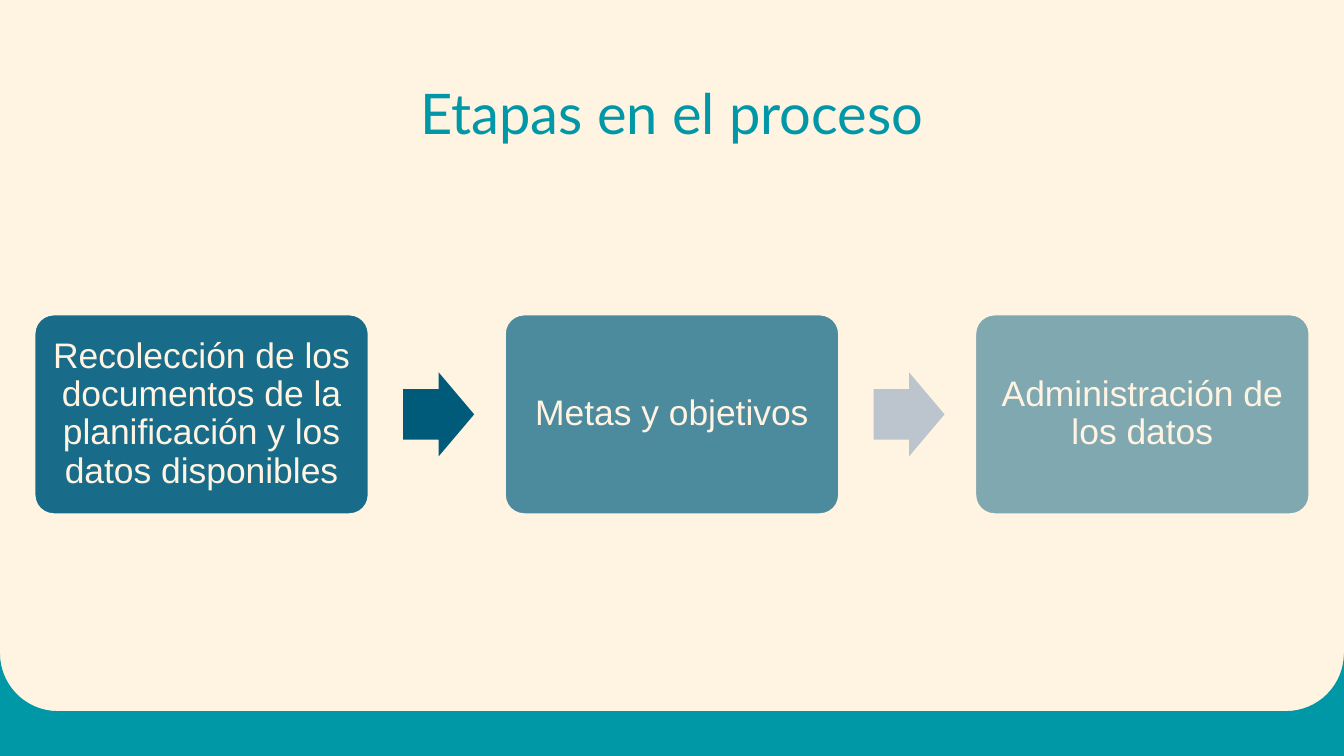
from dataclasses import dataclass
from math import cos, pi, sin

from lxml import etree
from pptx import Presentation
from pptx.dml.color import RGBColor
from pptx.enum.shapes import MSO_SHAPE
from pptx.enum.text import MSO_ANCHOR, PP_ALIGN
from pptx.oxml.ns import qn
from pptx.util import Pt

ROUNDED = MSO_SHAPE.ROUNDED_RECTANGLE
ARROW = MSO_SHAPE.RIGHT_ARROW
CENTER = PP_ALIGN.CENTER
MIDDLE = MSO_ANCHOR.MIDDLE
TOP = MSO_ANCHOR.TOP


@dataclass(frozen=True)
class Theme:
    cream: RGBColor = RGBColor(0xFF, 0xF3, 0xE2)
    teal: RGBColor = RGBColor(0x00, 0x97, 0xA7)
    stage: RGBColor = RGBColor(0x00, 0x5E, 0x80)
    arrows: tuple = (RGBColor(0x00, 0x5A, 0x7A), RGBColor(0xBC, 0xC5, 0xCD))
    title_font: str = "Lato"
    body_font: str = "Arial"
    title_size: int = 30
    body_size: int = 19


THEME = Theme()
STAGES = (
    ("Recolección de los documentos de la planificación y los datos disponibles", 90),
    ("Metas y objetivos", 70),
    ("Administración de los datos", 50),
)


@dataclass(frozen=True)
class Box:
    left: float
    top: float
    width: float
    height: float

    def lengths(self):
        return Pt(self.left), Pt(self.top), Pt(self.width), Pt(self.height)


def paint(shape, color, opacity=100):
    shape.shadow.inherit = False
    shape.fill.solid()
    shape.fill.fore_color.rgb = color
    shape.line.fill.background()
    if opacity < 100:
        color_element = shape.fill._xPr.find(qn("a:solidFill"))[0]
        etree.SubElement(color_element, qn("a:alpha"), val=str(opacity * 1000))


def write(shape, text, font, size, color, inset, anchor, spacing=1.0):
    frame = shape.text_frame
    frame.word_wrap = True
    frame.vertical_anchor = anchor
    frame.margin_left = frame.margin_right = Pt(inset)
    frame.margin_top = frame.margin_bottom = Pt(inset)
    paragraph = frame.paragraphs[0]
    paragraph.alignment = CENTER
    paragraph.line_spacing = spacing
    run = paragraph.add_run()
    run.text = text
    run.font.name = font
    run.font.size = Pt(size)
    run.font.color.rgb = color


def add_footer(slide, box, radius=31, steps=16):
    right, bottom = box.left + box.width, box.top + box.height
    angles = [step * pi / 2 / steps for step in range(steps + 1)]
    left_curve = [
        (box.left + radius * (1 - cos(angle)), box.top + radius * sin(angle))
        for angle in angles
    ]
    right_curve = [(box.left + right - x, y) for x, y in reversed(left_curve)]
    points = left_curve + right_curve + [(right, bottom), (box.left, bottom)]
    builder = slide.shapes.build_freeform(
        Pt(points[0][0]), Pt(points[0][1]), scale=1.0
    )
    builder.add_line_segments([(Pt(x), Pt(y)) for x, y in points[1:]], close=True)
    paint(builder.convert_to_shape(), THEME.teal)


def add_title(slide, box, text):
    title = slide.shapes.add_textbox(*box.lengths())
    write(title, text, THEME.title_font, THEME.title_size, THEME.teal, 7.2, TOP)


def add_stage(slide, box, text, opacity):
    stage = slide.shapes.add_shape(ROUNDED, *box.lengths())
    stage.adjustments[0] = 0.1
    paint(stage, THEME.stage, opacity)
    stage.line.color.rgb = THEME.cream
    stage.line.width = Pt(2)
    write(stage, text, THEME.body_font, THEME.body_size, THEME.cream, 5, MIDDLE, 0.9)


def add_arrow(slide, box, color):
    arrow = slide.shapes.add_shape(ARROW, *box.lengths())
    arrow.adjustments[0] = 0.6
    arrow.adjustments[1] = 0.5
    paint(arrow, color)


def add_process(slide, box, stage_width=180, arrow_width=38, arrow_height=45):
    pitch = (box.width - stage_width) / (len(STAGES) - 1)
    arrow_top = box.top + (box.height - arrow_height) / 2
    for index, (text, opacity) in enumerate(STAGES):
        left = box.left + index * pitch
        add_stage(slide, Box(left, box.top, stage_width, box.height), text, opacity)
        if index < len(THEME.arrows):
            arrow_left = left + stage_width + 18
            arrow_box = Box(arrow_left, arrow_top, arrow_width, arrow_height)
            add_arrow(slide, arrow_box, THEME.arrows[index])


def main():
    presentation = Presentation()
    presentation.slide_width = Pt(720)
    presentation.slide_height = Pt(405)
    slide = presentation.slides.add_slide(presentation.slide_layouts[6])
    slide.background.fill.solid()
    slide.background.fill.fore_color.rgb = THEME.cream
    add_footer(slide, Box(0, 350, 720, 55))
    add_process(slide, Box(18, 168, 684, 108))
    add_title(slide, Box(57, 35, 606, 45), "Etapas en el proceso")
    presentation.save("out.pptx")


if __name__ == "__main__":
    main()
